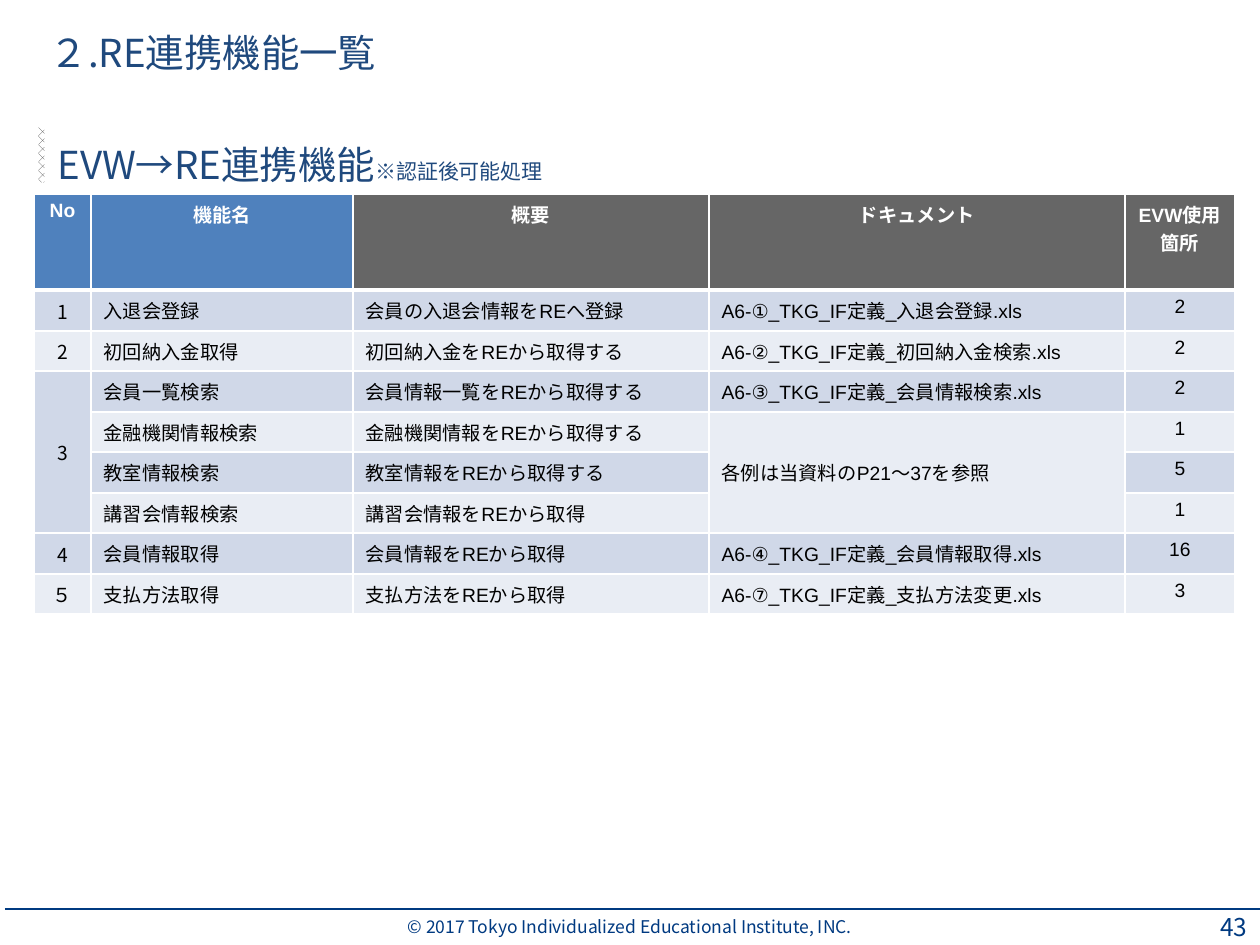
"""Build the slide listing the EVW to RE integration functions."""
from lxml import etree
from pptx import Presentation
from pptx.dml.color import RGBColor
from pptx.enum.dml import MSO_PATTERN
from pptx.enum.shapes import MSO_CONNECTOR, MSO_SHAPE
from pptx.enum.text import MSO_ANCHOR, PP_ALIGN
from pptx.oxml.ns import qn
from pptx.util import Pt

LEFT, CENTER, RIGHT = PP_ALIGN.LEFT, PP_ALIGN.CENTER, PP_ALIGN.RIGHT
TOP, MIDDLE = MSO_ANCHOR.TOP, MSO_ANCHOR.MIDDLE
RECTANGLE, STRAIGHT = MSO_SHAPE.RECTANGLE, MSO_CONNECTOR.STRAIGHT
HALF_TONE = MSO_PATTERN.PERCENT_50
PX = 914400 / 126
GOTHIC, ARIAL = "Noto Sans CJK JP", "Arial"
COLORS = {
    "heading": "1F497D", "footer": "003A81", "header_blue": "4F81BD",
    "header_gray": "666666", "band_dark": "D0D8E8", "band_light": "E9EDF4",
    "accent": "4D4D4D", "white": "FFFFFF", "black": "000000",
}


def px(*lengths):
    return [round(length * PX) for length in lengths]


def write(frame, text, size=11, font=GOTHIC, color="black", bold=False,
          align=LEFT, anchor=TOP, wrap=True):
    frame.word_wrap = wrap
    frame.vertical_anchor = anchor
    for index, line in enumerate(text.split("\n")):
        paragraph = frame.add_paragraph() if index else frame.paragraphs[-1]
        paragraph.alignment = align
        run = paragraph.add_run()
        run.text = line
        run.font.size = Pt(size)
        run.font.bold = bold
        run.font.color.rgb = RGBColor.from_string(COLORS[color])
        run.font.name = font
        east_asian = etree.SubElement(run._r.get_or_add_rPr(), qn("a:ea"))
        east_asian.set("typeface", GOTHIC)


presentation = Presentation()
presentation.slide_width, presentation.slide_height = px(1260, 945)
slide = presentation.slides.add_slide(presentation.slide_layouts[5])
shapes = slide.shapes

title = shapes.title
title.left, title.top, title.width, title.height = px(37, 14, 984, 76)
write(title.text_frame, "２.RE連携機能一覧", size=22, color="heading",
      anchor=MIDDLE, wrap=False)

footer_rule = shapes.add_connector(STRAIGHT, *px(5, 909, 1261, 909))
footer_rule.line.color.rgb = RGBColor.from_string(COLORS["footer"])
footer_rule.line.width = Pt(1)
etree.SubElement(footer_rule._element.spPr, qn("a:effectLst"))

copyright_line = shapes.add_textbox(*px(222, 909, 815, 36)).text_frame
copyright_line.margin_top = copyright_line.margin_bottom = 0
write(copyright_line, "© 2017 Tokyo Individualized Educational Institute, INC.",
      size=10, color="footer", align=CENTER, anchor=MIDDLE, wrap=False)
page_number = shapes.add_textbox(*px(1186, 909, 74, 36)).text_frame
write(page_number, "43", size=14, color="footer", align=RIGHT, anchor=MIDDLE,
      wrap=False)

HEADERS = ["No", "機能名", "概要", "ドキュメント", "EVW使用\n箇所"]
FUNCTIONS = [
    ["1", "入退会登録", "会員の入退会情報をREへ登録", "A6-①_TKG_IF定義_入退会登録.xls", "2"],
    ["2", "初回納入金取得", "初回納入金をREから取得する", "A6-②_TKG_IF定義_初回納入金検索.xls", "2"],
    ["3", "会員一覧検索", "会員情報一覧をREから取得する", "A6-③_TKG_IF定義_会員情報検索.xls", "2"],
    [None, "金融機関情報検索", "金融機関情報をREから取得する", "各例は当資料のP21～37を参照", "1"],
    [None, "教室情報検索", "教室情報をREから取得する", None, "5"],
    [None, "講習会情報検索", "講習会情報をREから取得", None, "1"],
    ["4", "会員情報取得", "会員情報をREから取得", "A6-④_TKG_IF定義_会員情報取得.xls", "16"],
    ["５", "支払方法取得", "支払方法をREから取得", "A6-⑦_TKG_IF定義_支払方法変更.xls", "3"],
]
COLUMN_WIDTHS = [57, 262, 356, 416, 110]
ROW_HEIGHTS = [96] + [41, 40] * 4

table = shapes.add_table(len(ROW_HEIGHTS), len(COLUMN_WIDTHS),
                         *px(34, 194, sum(COLUMN_WIDTHS), sum(ROW_HEIGHTS))).table
for column, width in zip(table.columns, px(*COLUMN_WIDTHS)):
    column.width = width
for row, height in zip(table.rows, px(*ROW_HEIGHTS)):
    row.height = height
table.cell(3, 0).merge(table.cell(6, 0))
table.cell(4, 3).merge(table.cell(6, 3))

for row, texts in enumerate([HEADERS] + FUNCTIONS):
    for col, text in enumerate(texts):
        cell = table.cell(row, col)
        is_header = row == 0
        is_number = col == 0 and not is_header
        for side in "LRTB":
            thick = (is_header and side == "B") or (row == 1 and side == "T")
            border = etree.SubElement(cell._tc.get_or_add_tcPr(), qn("a:ln" + side))
            border.set("w", str(Pt(3 if thick else 1)))
            border_fill = etree.SubElement(border, qn("a:solidFill"))
            etree.SubElement(border_fill, qn("a:srgbClr")).set("val", COLORS["white"])
        if is_header:
            fill = "header_blue" if col < 2 else "header_gray"
        else:
            fill = "band_dark" if row % 2 else "band_light"
        cell.fill.solid()
        cell.fill.fore_color.rgb = RGBColor.from_string(COLORS[fill])
        if is_number:
            cell.margin_left, cell.margin_right, cell.margin_top = px(1, 1, 1)
            cell.margin_bottom = 0
        if text:
            write(cell.text_frame, text, font=GOTHIC if is_number else ARIAL,
                  color="white" if is_header else "black", bold=is_header,
                  align=CENTER if is_header or col in (0, 4) else LEFT)
            centered = is_number or (col == 3 and row in (3, 4))
            cell.vertical_anchor = MIDDLE if centered else TOP

section_heading = shapes.add_textbox(*px(45, 128, 1139, 73)).text_frame
for text, size in [("EVW→RE連携機能", 22), ("※認証後可能処理", 12)]:
    write(section_heading, text, size=size, color="heading", anchor=MIDDLE)

heading_accent = shapes.add_shape(RECTANGLE, *px(14, 152, 55, 6))
heading_accent.rotation = 270
heading_accent.shadow.inherit = False
heading_accent.fill.patterned()
heading_accent.fill.pattern = HALF_TONE
heading_accent.fill.fore_color.rgb = RGBColor.from_string(COLORS["accent"])
heading_accent.fill.back_color.rgb = RGBColor.from_string(COLORS["white"])
heading_accent.line.fill.background()

presentation.save("out.pptx")
